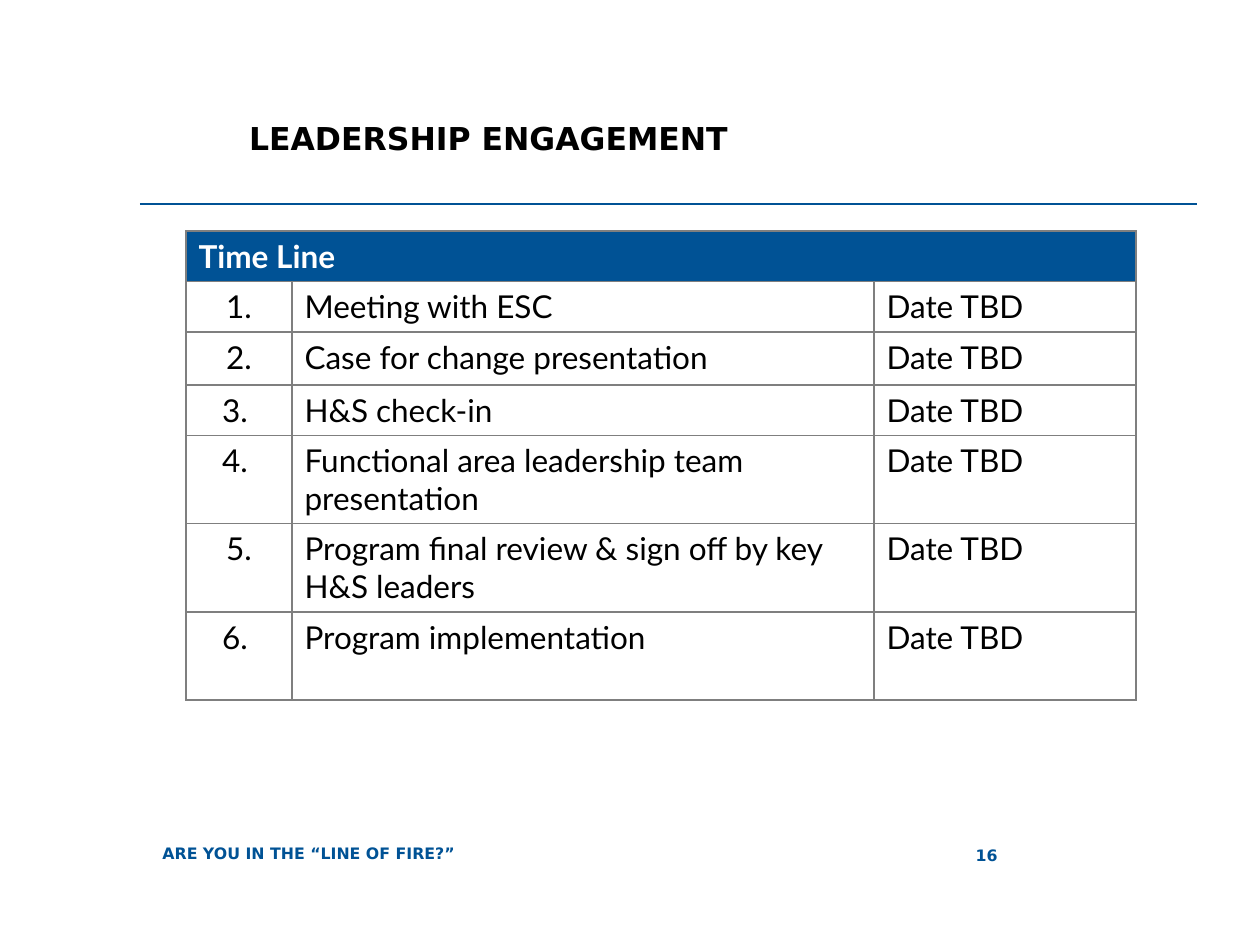
from dataclasses import dataclass
from lxml.etree import SubElement as Sub
from pptx import Presentation
from pptx.dml.color import RGBColor as Rgb
from pptx.enum.shapes import MSO_CONNECTOR as Link
from pptx.enum.text import MSO_ANCHOR as Anchor, PP_ALIGN as Align
from pptx.oxml.ns import qn
from pptx.util import Pt


@dataclass(frozen=True)
class Theme:
    blue: str = "005295"
    black: str = "000000"
    white: str = "FFFFFF"
    grid: str = "7F7F7F"
    head: str = "DejaVu Sans"
    body: str = "Lato"
    large: int = 18
    small: int = 9
    rule: int = 1


THEME = Theme()
SCALE = 914400 / 126
COLS = (106, 582, 262)
HEIGHTS = (50, 50, 53, 50, 88, 88, 88)
DATE = "Date TBD"
STEPS = (
    ("1.", "Meeting with ESC"),
    ("2.", "Case for change presentation"),
    ("3. ", "H&S check-in"),
    ("4. ", "Functional area leadership team presentation"),
    ("5.", "Program final review & sign off by key H&S leaders"),
    ("6. ", "Program implementation"),
)


def px(*sizes):
    return [round(size * SCALE) for size in sizes]


def write(frame, text, face, size, color, bold=False, align=Align.LEFT):
    frame.text = text
    para = frame.paragraphs[0]
    para.alignment = align
    font = para.runs[0].font
    font.name, font.size, font.bold = face, Pt(size), bold
    font.color.rgb = Rgb.from_string(color)


def add_title(slide, text, box):
    title = slide.shapes.title
    title.left, title.top, title.width, title.height = px(*box)
    frame = title.text_frame
    frame.margin_left = 0
    frame.vertical_anchor = Anchor.TOP
    write(frame, text, THEME.head, THEME.large, THEME.black, True)


def add_rule(slide, ends):
    line = slide.shapes.add_connector(Link.STRAIGHT, *px(*ends))
    line.line.color.rgb = Rgb.from_string(THEME.blue)
    line.line.width = Pt(THEME.rule)
    Sub(line._element.spPr, qn("a:effectLst"))


def add_foot(slide, text, box, align=Align.LEFT):
    frame = slide.shapes.add_textbox(*px(*box)).text_frame
    frame.word_wrap = True
    frame.vertical_anchor = Anchor.MIDDLE
    write(frame, text, THEME.head, THEME.small, THEME.blue, True, align)


def add_edges(cell):
    props = cell._tc.get_or_add_tcPr()
    for side in ("lnL", "lnR", "lnT", "lnB"):
        edge = Sub(props, qn(f"a:{side}"), w=str(Pt(THEME.rule)))
        Sub(Sub(edge, qn("a:solidFill")), qn("a:srgbClr"), val=THEME.grid)


def add_steps(slide, left, top):
    box = px(left, top, sum(COLS), sum(HEIGHTS))
    grid = slide.shapes.add_table(len(HEIGHTS), len(COLS), *box).table
    grid.first_row = grid.horz_banding = False
    for col, width in zip(grid.columns, px(*COLS)):
        col.width = width
    for row, height in zip(grid.rows, px(*HEIGHTS)):
        row.height = height
    for cell in grid.iter_cells():
        add_edges(cell)
        cell.fill.background()
    head = grid.cell(0, 0)
    head.merge(grid.cell(0, len(COLS) - 1))
    head.fill.solid()
    head.fill.fore_color.rgb = Rgb.from_string(THEME.blue)
    head.vertical_anchor = Anchor.MIDDLE
    write(head.text_frame, "Time Line", THEME.body, THEME.large, THEME.white, True)
    for row, step in enumerate(STEPS, 1):
        for col, text in enumerate((*step, DATE)):
            align = Align.LEFT if col else Align.CENTER
            frame = grid.cell(row, col).text_frame
            write(frame, text, THEME.body, THEME.large, THEME.black, align=align)


def main():
    deck = Presentation()
    deck.slide_width, deck.slide_height = px(1260, 945)
    slide = deck.slides.add_slide(deck.slide_layouts[5])
    add_rule(slide, (140, 204, 1197, 204))
    add_title(slide, "LEADERSHIP ENGAGEMENT", (249, 113, 950, 101))
    add_foot(slide, "ARE YOU IN THE “LINE OF FIRE?”", (150, 830, 698, 47))
    add_foot(slide, "16", (883, 830, 127, 50), Align.RIGHT)
    add_steps(slide, 186, 231)
    deck.save("out.pptx")


if __name__ == "__main__":
    main()
